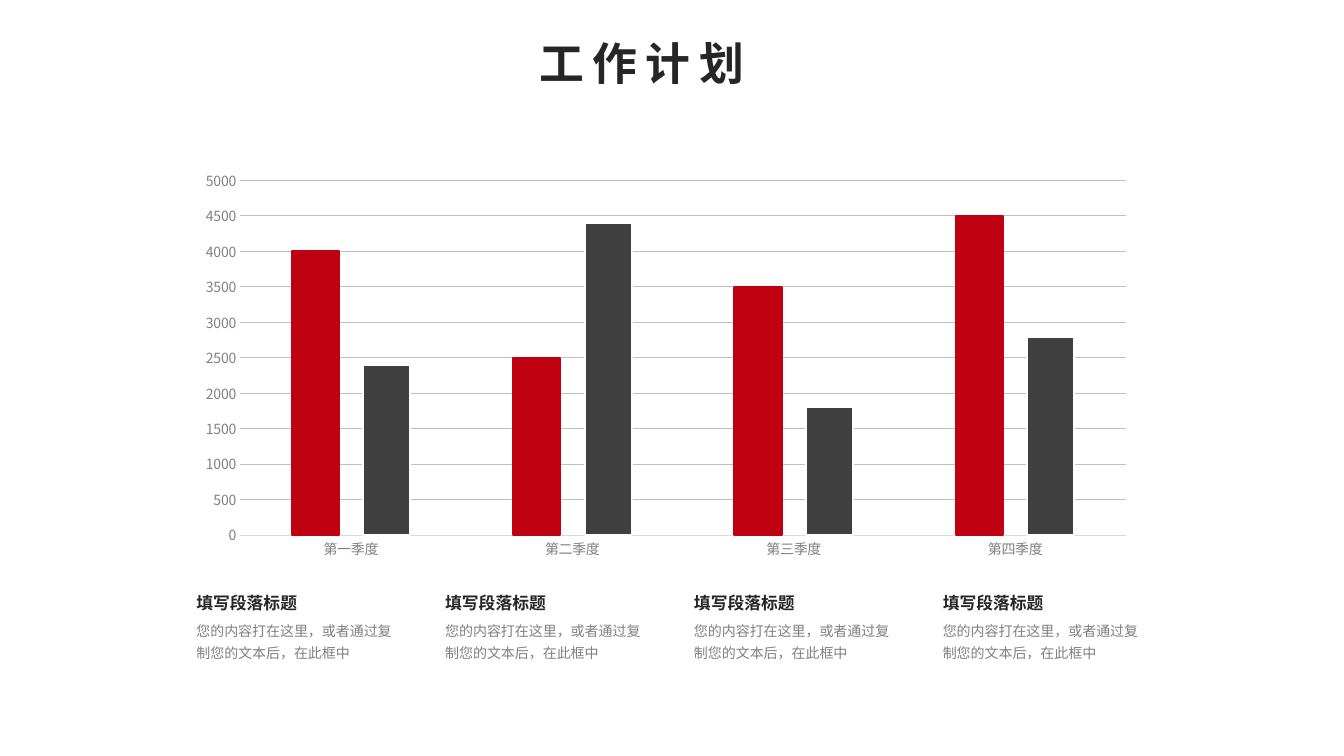
"""Build the work plan slide: a quarterly column chart above four notes."""
from lxml import etree
from pptx import Presentation
from pptx.chart.data import CategoryChartData
from pptx.dml.color import RGBColor
from pptx.enum.chart import XL_CHART_TYPE, XL_TICK_MARK
from pptx.enum.text import MSO_ANCHOR, MSO_AUTO_SIZE, PP_ALIGN
from pptx.oxml.ns import qn
from pptx.util import Cm, Pt

FONT = "Noto Sans CJK SC"
INK = RGBColor(0x26, 0x26, 0x26)
GREY = RGBColor(0x80, 0x80, 0x80)
RED = RGBColor(0xBE, 0x00, 0x10)
DARK = RGBColor(0x40, 0x40, 0x40)
WHITE = RGBColor(0xFF, 0xFF, 0xFF)
GRID = RGBColor(0xBF, 0xBF, 0xBF)
BASE = RGBColor(0xD9, 0xD9, 0xD9)
COLUMN = XL_CHART_TYPE.COLUMN_CLUSTERED
NO_TICK = XL_TICK_MARK.NONE
TOP, MIDDLE = MSO_ANCHOR.TOP, MSO_ANCHOR.MIDDLE
GROW = MSO_AUTO_SIZE.SHAPE_TO_FIT_TEXT
JUSTIFY = PP_ALIGN.JUSTIFY


def set_font(font, props, size, color):
    font.size = Pt(size)
    font.color.rgb = color
    font.name = FONT
    etree.SubElement(props, qn("a:ea"), typeface=FONT)


def write(shape, text, size, color, bold=False, wrap=True, anchor=TOP):
    frame = shape.text_frame
    frame.text = text
    frame.word_wrap = wrap
    frame.auto_size = GROW
    frame.vertical_anchor = anchor
    line = frame.paragraphs[0]
    font = line.runs[0].font
    font.bold = bold
    props = next(shape.element.iter(qn("a:rPr")))
    set_font(font, props, size, color)
    return line, props


deck = Presentation()
deck.slide_width, deck.slide_height = Cm(33.87), Cm(19.05)
slide = deck.slides.add_slide(deck.slide_layouts[5])
shapes = slide.shapes

title = shapes.title
title.left, title.top = Cm(13.34), Cm(0.76)
title.width, title.height = Cm(6.6), Cm(1.63)
line, props = write(title, "工作计划", 32, INK, bold=True)
line.alignment = JUSTIFY
props.set("spc", "600")

data = CategoryChartData()
data.categories = ["第一季度", "第二季度", "第三季度", "第四季度"]
data.add_series("Series 1", [4000, 2500, 3500, 4500])
data.add_series("Series 2", [2400, 4400, 1800, 2800])
chart = shapes.add_chart(
    COLUMN, Cm(4.7), Cm(4.09), Cm(24.16), Cm(10.19), data).chart
chart.has_legend = False
chart.has_title = False
font = chart.font
set_font(font, chart.element.xpath("c:txPr//a:defRPr")[0], 10, GREY)

plot = chart.plots[0]
plot.gap_width = 219
plot.overlap = -52
plot.vary_by_categories = False
for series, fill, edge in zip(plot.series, (RED, DARK), (RED, WHITE)):
    look = series.format
    look.fill.solid()
    look.fill.fore_color.rgb = fill
    look.line.color.rgb = edge
    look.line.width = Pt(1.5)

cats, vals = chart.category_axis, chart.value_axis
for axis in (cats, vals):
    axis.major_tick_mark = axis.minor_tick_mark = NO_TICK
cats.format.line.color.rgb = BASE
cats.format.line.width = Pt(0.75)
vals.format.line.fill.background()
vals.minimum_scale, vals.maximum_scale, vals.major_unit = 0, 5000, 500
grid = vals.major_gridlines.format.line
grid.color.rgb = GRID
grid.width = Pt(0.75)

area = chart.element.xpath(".//c:plotArea")[0]
for old in area.findall(qn("c:layout")):
    area.remove(old)
layout = etree.Element(qn("c:layout"))
area.insert(0, layout)
manual = etree.SubElement(layout, qn("c:manualLayout"))
for tag, value in (("layoutTarget", "inner"), ("xMode", "edge"),
                   ("yMode", "edge"), ("x", "0.056"), ("y", "0.045"),
                   ("w", "0.924"), ("h", "0.877")):
    etree.SubElement(manual, qn("c:" + tag), val=value)

for i in range(4):
    left = Cm(4.7 + 6.27 * i)
    head = shapes.add_textbox(left, Cm(14.81), Cm(3.15), Cm(0.76))
    write(head, "填写段落标题", 12, INK, bold=True, wrap=False, anchor=MIDDLE)
    note = shapes.add_textbox(left, Cm(15.44), Cm(5.61), Cm(1.32))
    line, props = write(
        note, "您的内容打在这里，或者通过复制您的文本后，在此框中", 10, GREY)
    line.line_spacing = 1.3

deck.save("out.pptx")
